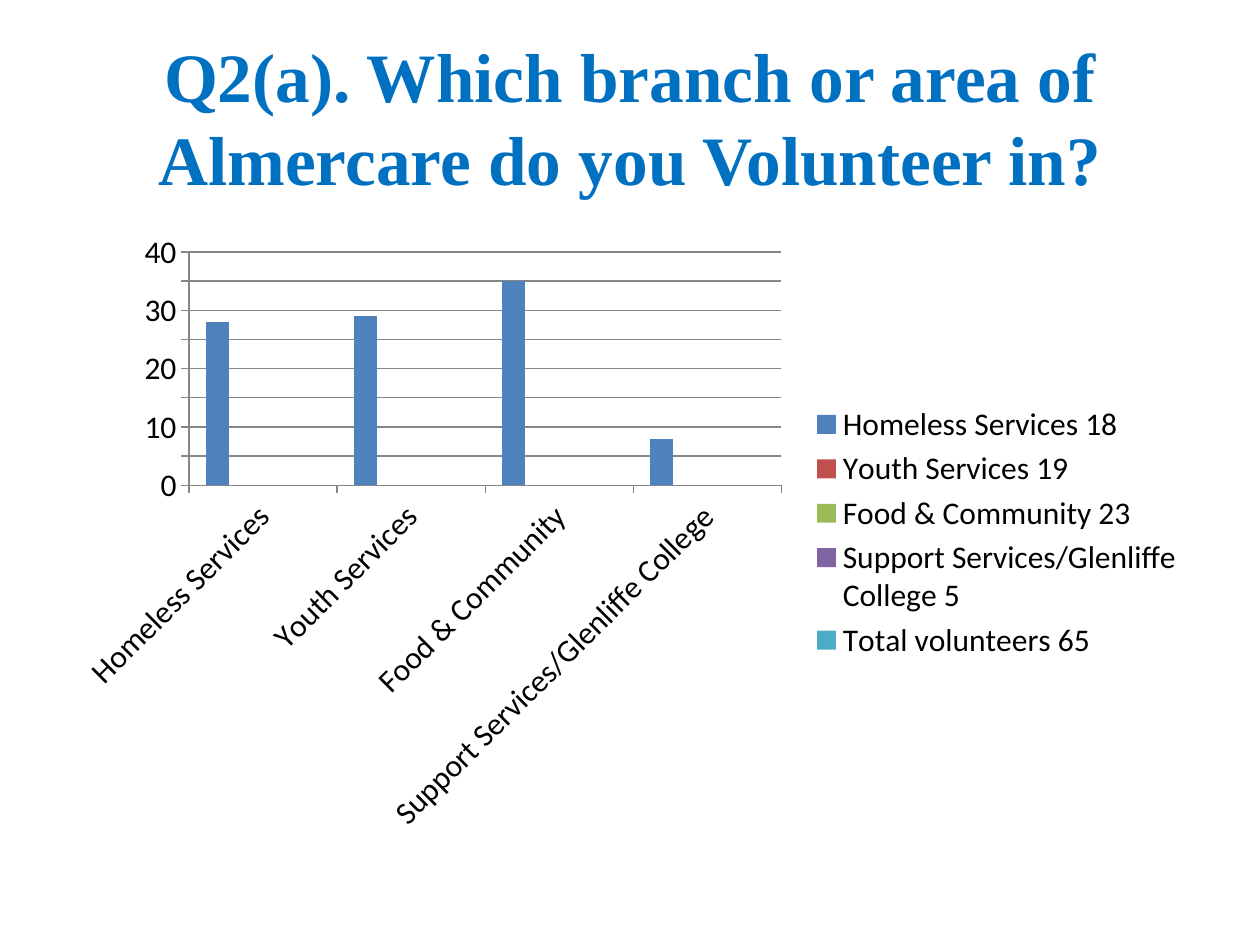
import dataclasses

import pptx
import pptx.chart.data
import pptx.dml.color
import pptx.enum.chart
import pptx.enum.text
import pptx.util

Inches = pptx.util.Inches
Color = pptx.dml.color.RGBColor.from_string


@dataclasses.dataclass(frozen=True)
class Theme:
    title_font: str = "Times New Roman"
    chart_font: str = "Calibri"
    title_size: float = 39.6
    chart_size: float = 18
    title_color: str = "0070C0"
    text_color: str = "000000"
    line_color: str = "868686"
    series_colors: tuple = ("4F81BD", "C0504D", "9BBB59", "8064A2", "4BACC6")


def apply_format(target, values):
    for name, value in values.items():
        setattr(target, name, value)


class SlideBuilder:
    def __init__(self, slide, theme):
        self.slide = slide
        self.theme = theme

    def style_font(self, font, name, size, color, bold=False):
        apply_format(font, {"name": name, "size": pptx.util.Pt(size), "bold": bold})
        font.color.rgb = Color(color)

    def style_line(self, line):
        line.color.rgb = Color(self.theme.line_color)
        line.width = pptx.util.Pt(0.75)

    def title(self, text, left, top, width, height):
        box = self.slide.shapes.add_textbox(
            Inches(left), Inches(top), Inches(width), Inches(height))
        apply_format(box.text_frame, {
            "word_wrap": True,
            "vertical_anchor": pptx.enum.text.MSO_ANCHOR.MIDDLE,
        })
        para = box.text_frame.paragraphs[0]
        para.alignment = pptx.enum.text.PP_ALIGN.CENTER
        span = para.add_run()
        span.text = text
        self.style_font(span.font, self.theme.title_font, self.theme.title_size,
                        self.theme.title_color, bold=True)

    def column_chart(self, categories, series, left, top, width, height):
        data = pptx.chart.data.CategoryChartData()
        data.categories = categories
        for name, values in series:
            data.add_series(name, values)
        chart = self.slide.shapes.add_chart(
            pptx.enum.chart.XL_CHART_TYPE.COLUMN_CLUSTERED,
            Inches(left), Inches(top), Inches(width), Inches(height), data).chart
        apply_format(chart, {"has_title": False, "has_legend": True})
        self.style_font(chart.font, self.theme.chart_font, self.theme.chart_size,
                        self.theme.text_color)
        apply_format(chart.legend, {
            "position": pptx.enum.chart.XL_LEGEND_POSITION.RIGHT,
            "include_in_layout": False,
        })
        apply_format(chart.plots[0], {
            "gap_width": 150, "overlap": 0, "vary_by_categories": False})
        for column, color in zip(chart.plots[0].series, self.theme.series_colors):
            column.format.fill.solid()
            column.format.fill.fore_color.rgb = Color(color)
        for axis in (chart.category_axis, chart.value_axis):
            apply_format(axis, {
                "major_tick_mark": pptx.enum.chart.XL_TICK_MARK.OUTSIDE,
                "minor_tick_mark": pptx.enum.chart.XL_TICK_MARK.NONE,
            })
            self.style_line(axis.format.line)
        chart.value_axis.has_major_gridlines = True
        self.style_line(chart.value_axis.major_gridlines.format.line)


def main():
    deck = pptx.Presentation()
    apply_format(deck, {"slide_width": Inches(10), "slide_height": Inches(7.5)})
    page = SlideBuilder(deck.slides.add_slide(deck.slide_layouts[6]), Theme())

    page.title("Q2(a). Which branch or area of Almercare do you Volunteer in?",
               0.5, 0.3, 9, 1.25)

    areas = ["Homeless Services", "Youth Services", "Food & Community",
             "Support Services/Glenliffe College"]
    volunteers = [18, 19, 23, 5]
    percentages = [28, 29, 35, 8]
    names = [f"{area} {count}" for area, count in zip(areas, volunteers)]
    names.append(f"Total volunteers {sum(volunteers)}")
    blanks = [None] * len(areas)
    series = [(name, blanks if index else percentages)
              for index, name in enumerate(names)]
    page.column_chart(areas, series, 0.5, 1.75, 9, 4.95)

    deck.save("out.pptx")


if __name__ == "__main__":
    main()
